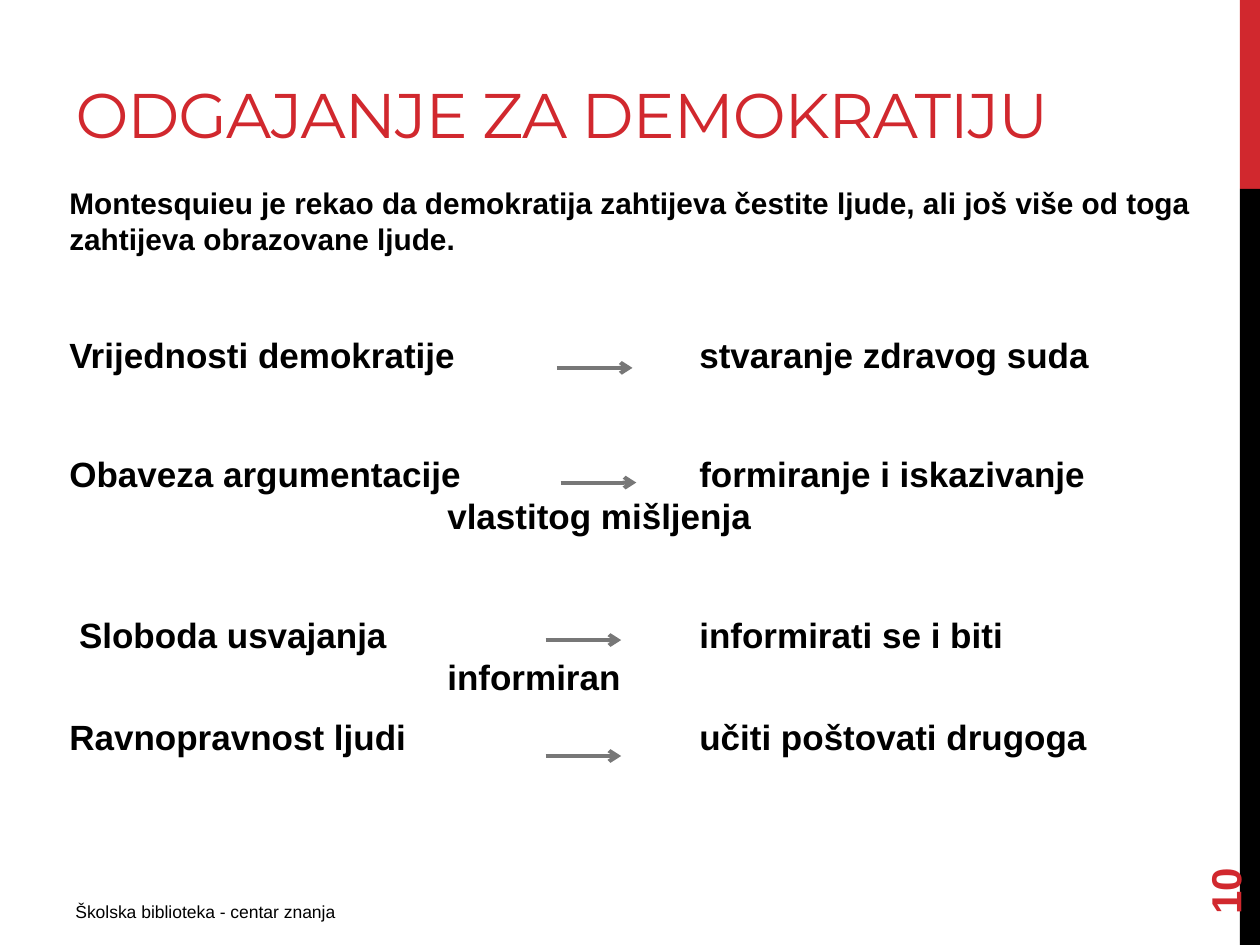
"""Builds a slide on educating for democracy."""
from lxml import etree
from pptx import Presentation
from pptx.dml.color import RGBColor
from pptx.enum.shapes import MSO_CONNECTOR, MSO_SHAPE
from pptx.enum.text import MSO_ANCHOR, MSO_AUTO_SIZE, PP_ALIGN
from pptx.oxml.ns import qn
from pptx.util import Inches, Pt

STRAIGHT = MSO_CONNECTOR.STRAIGHT
RECTANGLE = MSO_SHAPE.RECTANGLE
TOP, MIDDLE, BOTTOM = MSO_ANCHOR.TOP, MSO_ANCHOR.MIDDLE, MSO_ANCHOR.BOTTOM
LEFT = PP_ALIGN.LEFT
NO_AUTOFIT = MSO_AUTO_SIZE.NONE

COLORS = {"red": "D1282E", "black": "000000", "white": "FFFFFF", "gray": "777777"}
TAB_SIZE = 1
EMPTY_LINE = 34
INTRO = ("Montesquieu je rekao da demokratija zahtijeva čestite ljude, "
         "ali još više od toga zahtijeva obrazovane ljude.")
VALUES = [
    (["Vrijednosti demokratije\t\tstvaranje zdravog suda"], EMPTY_LINE),
    (["Obaveza argumentacije\t\tformiranje i iskazivanje", "\t\t\tvlastitog mišljenja"], EMPTY_LINE),
    ([" Sloboda usvajanja\t\t\tinformirati se i biti", "\t\t\tinformiran"], EMPTY_LINE),
    (["Ravnopravnost ljudi\t\t\tučiti poštovati drugoga"], 0),
]
ARROWS = [(4.45, 3.83), (4.42, 2.92), (4.33, 5.08), (4.33, 6)]
ARROW_LENGTH = 0.6


class SlideBuilder:
    """Holds the style and the current slide."""

    def __init__(self, presentation):
        self.slide = presentation.slides.add_slide(presentation.slide_layouts[1])
        self.font = "Arial"

    def color(self, name):
        return RGBColor.from_string(COLORS[name])

    def place(self, shape, left, top, width, height):
        shape.left, shape.top = Inches(left), Inches(top)
        shape.width, shape.height = Inches(width), Inches(height)

    def frame(self, shape, anchor):
        text_frame = shape.text_frame
        text_frame.word_wrap = True
        text_frame.auto_size = NO_AUTOFIT
        text_frame.vertical_anchor = anchor
        return text_frame

    def run(self, paragraph, text, size, color="black", bold=False, font=None):
        run = paragraph.add_run()
        run.text = text
        run.font.name = font or self.font
        run.font.size = Pt(size)
        run.font.bold = bold
        run.font.color.rgb = self.color(color)
        return run

    def bar(self, top, height, color):
        shape = self.slide.shapes.add_shape(
            RECTANGLE, Inches(9.84), Inches(top), Inches(0.16), Inches(height))
        shape.shadow.inherit = False
        shape.fill.solid()
        shape.fill.fore_color.rgb = self.color(color)
        shape.line.fill.background()

    def title(self, text):
        shape = self.slide.shapes.title
        self.place(shape, 0.5, 0.5, 9, 0.75)
        paragraph = self.frame(shape, BOTTOM).paragraphs[0]
        paragraph.alignment = LEFT
        run = self.run(paragraph, text, 36, "red", font="Montserrat")
        run.font._element.set("spc", "-60")

    def body(self, intro, values):
        shape = self.slide.placeholders[1]
        self.place(shape, 0.45, 1.42, 9.17, 5.33)
        shape.fill.solid()
        shape.fill.fore_color.rgb = self.color("white")
        text_frame = self.frame(shape, TOP)
        self.body_paragraph(text_frame.paragraphs[0], [intro], 17)
        for lines, gap in values:
            self.body_paragraph(text_frame.add_paragraph(), lines, 20, gap)

    def body_paragraph(self, paragraph, lines, size, gap=0):
        paragraph.line_spacing = 1.0
        paragraph.space_before = Pt(size * 0.2 + gap)
        paragraph.space_after = Pt(6)
        properties = paragraph._p.get_or_add_pPr()
        properties.set("marL", "0")
        properties.set("indent", "0")
        properties.set("defTabSz", str(Inches(TAB_SIZE)))
        etree.SubElement(properties, qn("a:buNone"))
        for index, line in enumerate(lines):
            if index:
                paragraph.add_line_break()
            self.run(paragraph, line, size, bold=True)

    def text(self, text, box, size, color="black", bold=False, anchor=TOP, rotation=0):
        shape = self.slide.shapes.add_textbox(*(Inches(value) for value in box))
        shape.rotation = rotation
        paragraph = self.frame(shape, anchor).paragraphs[0]
        self.run(paragraph, text, size, color, bold)

    def arrow(self, left, top):
        connector = self.slide.shapes.add_connector(
            STRAIGHT, Inches(left), Inches(top), Inches(left + ARROW_LENGTH), Inches(top))
        connector.line.color.rgb = self.color("gray")
        connector.line.width = Pt(2.25)
        etree.SubElement(connector.line._get_or_add_ln(), qn("a:tailEnd"), type="arrow")
        etree.SubElement(connector._element.spPr, qn("a:effectLst"))


def main():
    presentation = Presentation()
    presentation.slide_width, presentation.slide_height = Inches(10), Inches(7.5)
    builder = SlideBuilder(presentation)
    builder.bar(0, 1.5, "red")
    builder.bar(1.5, 6, "black")
    builder.title("ODGAJANJE ZA DEMOKRATIJU")
    builder.body(INTRO, VALUES)
    builder.text("Školska biblioteka - centar znanja", (0.5, 7.1, 3.75, 0.31), 10)
    builder.text("10", (9, 6.44, 1.44, 0.4), 24, "red", True, MIDDLE, 270)
    for left, top in ARROWS:
        builder.arrow(left, top)
    presentation.save("out.pptx")


if __name__ == "__main__":
    main()
